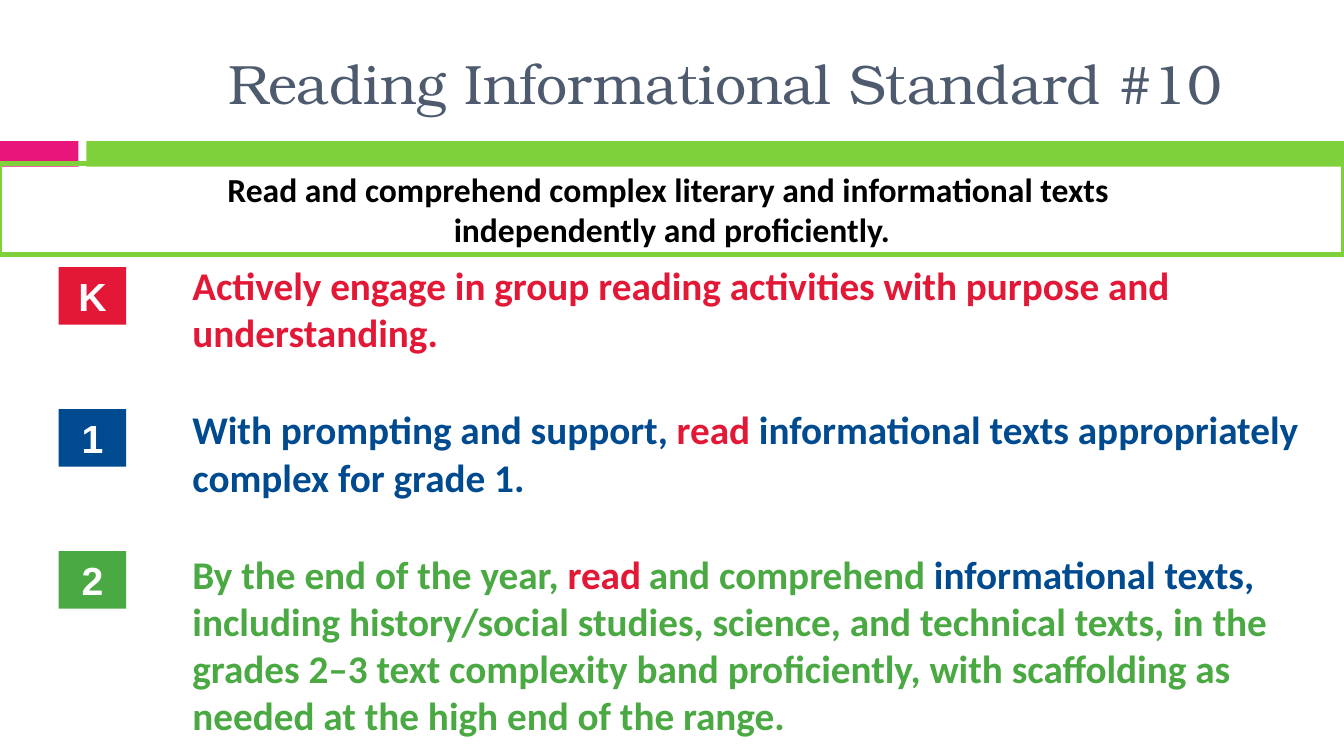
"""Build the slide on Reading Informational Standard #10 for grades K to 2."""
from pptx import Presentation
from pptx.dml.color import RGBColor
from pptx.enum import shapes, text
from pptx.util import Cm, Pt

RED = RGBColor(0xE3, 0x18, 0x36)
BLUE = RGBColor(0x00, 0x4A, 0x90)
GREEN = RGBColor(0x4A, 0xA9, 0x42)
PINK = RGBColor(0xEA, 0x15, 0x7A)
LIME = RGBColor(0x7F, 0xD1, 0x3B)
SLATE = RGBColor(0x4E, 0x5B, 0x6F)
BLACK = RGBColor(0, 0, 0)
WHITE = RGBColor(0xFF, 0xFF, 0xFF)

TITLE = "Reading Informational Standard #10"
STANDARD = [
    "Read and comprehend complex literary and informational texts ",
    "independently and proficiently.",
]
GRADES = [
    ("K", RED, [
        ("Actively engage in group reading activities with purpose and understanding.", RED, 28),
    ]),
    ("1", BLUE, [
        ("With prompting and support, ", BLUE, 28),
        ("read", RED, 28),
        (" informational texts appropriately complex for grade 1.", BLUE, 28),
    ]),
    ("2", GREEN, [
        ("By the end of the year, ", GREEN, 28),
        ("read", RED, 28),
        (" ", RED, 25),
        ("and comprehend ", GREEN, 28),
        ("informational texts,", BLUE, 28),
        (" ", GREEN, 25),
        ("including history/social studies, science, and technical texts, in the "
         "grades 2–3 text complexity band proficiently, with scaffolding as "
         "needed at the high end of the range.", GREEN, 28),
    ]),
]
BARS = [(0, 1.98, PINK), (2.18, 31.69, LIME)]

SLIDE_W, SLIDE_H = 33.87, 19.05
BAR_TOP, BAR_H = 3.56, 0.64
BADGE_TOP, BADGE_STEP = 6.73, 3.58
TEXT_TOP, TEXT_STEP = 6.45, 3.65


def add_run(p, words, font, size, color, bold=True):
    """Append one formatted run to a paragraph."""
    r = p.add_run()
    r.text = words
    r.font.name, r.font.size, r.font.bold = font, Pt(size), bold
    r.font.color.rgb = color


def add_box(s, left, top, width, height, fill=None, line=None):
    """Add a flat rectangle with an optional fill and outline."""
    sp = s.shapes.add_shape(shapes.MSO_SHAPE.RECTANGLE, Cm(left), Cm(top), Cm(width), Cm(height))
    sp.shadow.inherit = False
    if fill is None:
        sp.fill.background()
    else:
        sp.fill.solid()
        sp.fill.fore_color.rgb = fill
    if line is None:
        sp.line.fill.background()
    else:
        sp.line.color.rgb = line
        sp.line.width = Pt(3.5)
    sp.text_frame.vertical_anchor = text.MSO_ANCHOR.MIDDLE
    return sp


def add_title(s):
    """Place and format the title placeholder."""
    sp = s.shapes.title
    sp.left, sp.top, sp.width, sp.height = Cm(5.51), Cm(1.24), Cm(27.74), Cm(1.68)
    tf = sp.text_frame
    tf.vertical_anchor = text.MSO_ANCHOR.MIDDLE
    p = tf.paragraphs[0]
    p.alignment = text.PP_ALIGN.LEFT
    add_run(p, TITLE, "TeX Gyre Bonum", 39.6, SLATE, False)


def add_grade(s, row, grade, color, runs):
    """Add the badge of one grade and its wording."""
    badge = add_box(s, 1.48, BADGE_TOP + row * BADGE_STEP, 1.7, 1.45, color)
    p = badge.text_frame.paragraphs[0]
    p.alignment = text.PP_ALIGN.CENTER
    add_run(p, grade, "Arial", 28, WHITE)
    sp = s.shapes.add_textbox(Cm(4.6), Cm(TEXT_TOP + row * TEXT_STEP), Cm(28.63), Cm(3.18))
    tf = sp.text_frame
    tf.word_wrap = True
    for words, run_color, size in runs:
        add_run(tf.paragraphs[0], words, "Calibri", size, run_color, bool(words.strip()))


def add_standard(s):
    """Add the outlined box with the anchor standard."""
    tf = add_box(s, 0, 4.11, SLIDE_W, 2.31, line=LIME).text_frame
    for i, words in enumerate(STANDARD):
        p = tf.add_paragraph() if i else tf.paragraphs[0]
        p.alignment = text.PP_ALIGN.CENTER
        add_run(p, words, "Calibri", 24, BLACK)


def main():
    """Assemble and save the slide."""
    prs = Presentation()
    prs.slide_width, prs.slide_height = Cm(SLIDE_W), Cm(SLIDE_H)
    s = prs.slides.add_slide(prs.slide_layouts[5])
    for left, width, color in BARS:
        add_box(s, left, BAR_TOP, width, BAR_H, color)
    add_title(s)
    for row, (grade, color, runs) in enumerate(GRADES):
        add_grade(s, row, grade, color, runs)
    add_standard(s)
    prs.save("out.pptx")


if __name__ == "__main__":
    main()
